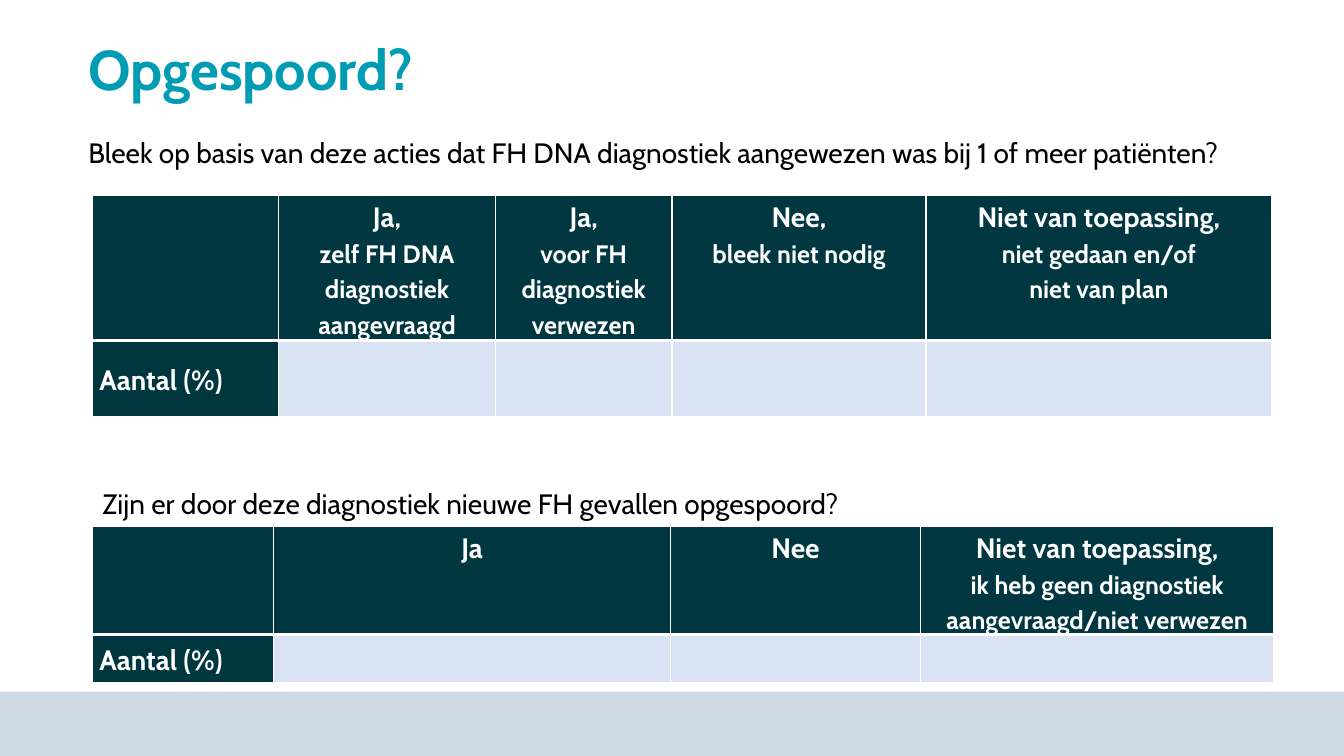
import pptx
import pptx.util
from dataclasses import dataclass
from lxml import etree
from pptx.dml.color import RGBColor
from pptx.enum.shapes import MSO_SHAPE
from pptx.enum.text import MSO_ANCHOR, PP_ALIGN
from pptx.oxml.ns import qn

Pt = pptx.util.Pt

# Content
TITLE = "Opgespoord?"
QUESTIONS = [
    # text, (left, top, width, height)
    ("Bleek op basis van deze acties dat FH DNA diagnostiek aangewezen was "
     "bij 1 of meer patiënten?", (56, 93, 890, 31.5)),
    ("Zijn er door deze diagnostiek nieuwe FH gevallen opgespoord?",
     (66, 343.5, 842, 31.5)),
]
ROW_LABEL = "Aantal (%)"
TABLES = [
    {
        "top": 139.5,
        "columns": [133, 155, 126, 181.5, 247],
        "rows": [100, 54],
        "headers": [
            [],
            ["Ja,", "zelf FH DNA diagnostiek aangevraagd"],
            ["Ja,", "voor FH diagnostiek verwezen"],
            ["Nee,", "bleek niet nodig"],
            ["Niet van toepassing,", "niet gedaan en/of", "niet van plan"],
        ],
    },
    {
        "top": 376,
        "columns": [129.5, 283.5, 178.5, 252.5],
        "rows": [73.5, 34],
        "headers": [
            [],
            ["Ja"],
            ["Nee"],
            ["Niet van toepassing,",
             "ik heb geen diagnostiek aangevraagd/niet verwezen"],
        ],
    },
]
SLIDE_SIZE = (960, 540)
TITLE_BOX = (56, 26, 769, 51)
FOOTER_TOP = 494
TABLE_LEFT = 66
CELL_INSET = 5


@dataclass(frozen=True)
class Theme:
    font: str = "Cabin"
    title: str = "009CB4"
    text: str = "000000"
    white: str = "FFFFFF"
    header: str = "003741"
    label: str = "00373E"
    answer: str = "DAE3F3"
    footer: str = "CED9E5"
    title_size: int = 40
    large: int = 20
    small: int = 18


THEME = Theme()


def points(values):
    return [Pt(value) for value in values]


def paint(fill, color):
    fill.solid()
    fill.fore_color.rgb = RGBColor.from_string(color)


def add_run(para, text, size, color, bold=False):
    run = para.add_run()
    run.text = text
    run.font.name = THEME.font
    run.font.size = Pt(size)
    run.font.bold = bold
    run.font.color.rgb = RGBColor.from_string(color)


def style_cell(cell, color, bottom_width):
    """Give the cell white borders, then its fill, as the XML order requires."""
    properties = cell._tc.get_or_add_tcPr()
    for side in ("lnL", "lnR", "lnT", "lnB"):
        width = bottom_width if side == "lnB" else 1
        line = etree.SubElement(properties, qn(f"a:{side}"), w=str(Pt(width)))
        solid = etree.SubElement(line, qn("a:solidFill"))
        etree.SubElement(solid, qn("a:srgbClr"), val=THEME.white)
    paint(cell.fill, color)
    cell.margin_left = cell.margin_right = Pt(CELL_INSET)
    cell.margin_top = cell.margin_bottom = 0


def write_cell(cell, lines, align):
    """Write one paragraph per line, the first in the large size."""
    for index, text in enumerate(lines):
        frame = cell.text_frame
        para = frame.add_paragraph() if index else frame.paragraphs[0]
        para.alignment = align
        para.line_spacing = 1.15
        size = THEME.small if index else THEME.large
        add_run(para, text, size, THEME.white, bold=True)


def add_answer_table(slide, content):
    columns, rows = content["columns"], content["rows"]
    frame = slide.shapes.add_table(
        len(rows), len(columns),
        *points((TABLE_LEFT, content["top"], sum(columns), sum(rows))))
    table = frame.table
    table.horz_banding = False
    for column, width in zip(table.columns, columns):
        column.width = Pt(width)
    for row, height in zip(table.rows, rows):
        row.height = Pt(height)
    for index, lines in enumerate(content["headers"]):
        header, answer = table.cell(0, index), table.cell(1, index)
        style_cell(header, THEME.header, bottom_width=3)
        write_cell(header, lines, PP_ALIGN.CENTER)
        style_cell(answer, THEME.answer if index else THEME.label, bottom_width=1)
    label = table.cell(1, 0)
    label.vertical_anchor = MSO_ANCHOR.MIDDLE
    write_cell(label, [ROW_LABEL], PP_ALIGN.LEFT)


def add_question(slide, text, place):
    box = slide.shapes.add_textbox(*points(place))
    box.text_frame.word_wrap = True
    box.text_frame.vertical_anchor = MSO_ANCHOR.MIDDLE
    add_run(box.text_frame.paragraphs[0], text, THEME.large, THEME.text)


def add_footer(slide):
    width, height = SLIDE_SIZE
    footer = slide.shapes.add_shape(
        MSO_SHAPE.RECTANGLE, *points((0, FOOTER_TOP, width, height - FOOTER_TOP)))
    footer.shadow.inherit = False
    paint(footer.fill, THEME.footer)
    footer.line.fill.background()


def add_title(slide):
    title = slide.shapes.title
    title.left, title.top, title.width, title.height = points(TITLE_BOX)
    title.text_frame.vertical_anchor = MSO_ANCHOR.MIDDLE
    para = title.text_frame.paragraphs[0]
    para.alignment = PP_ALIGN.LEFT
    para.line_spacing = 0.9
    add_run(para, TITLE, THEME.title_size, THEME.title, bold=True)


def main():
    deck = pptx.Presentation()
    deck.slide_width, deck.slide_height = points(SLIDE_SIZE)
    slide = deck.slides.add_slide(deck.slide_layouts.get_by_name("Title Only"))
    add_footer(slide)
    add_title(slide)
    for (text, place), content in zip(QUESTIONS, TABLES):
        add_answer_table(slide, content)
        add_question(slide, text, place)
    deck.save("out.pptx")


if __name__ == "__main__":
    main()
